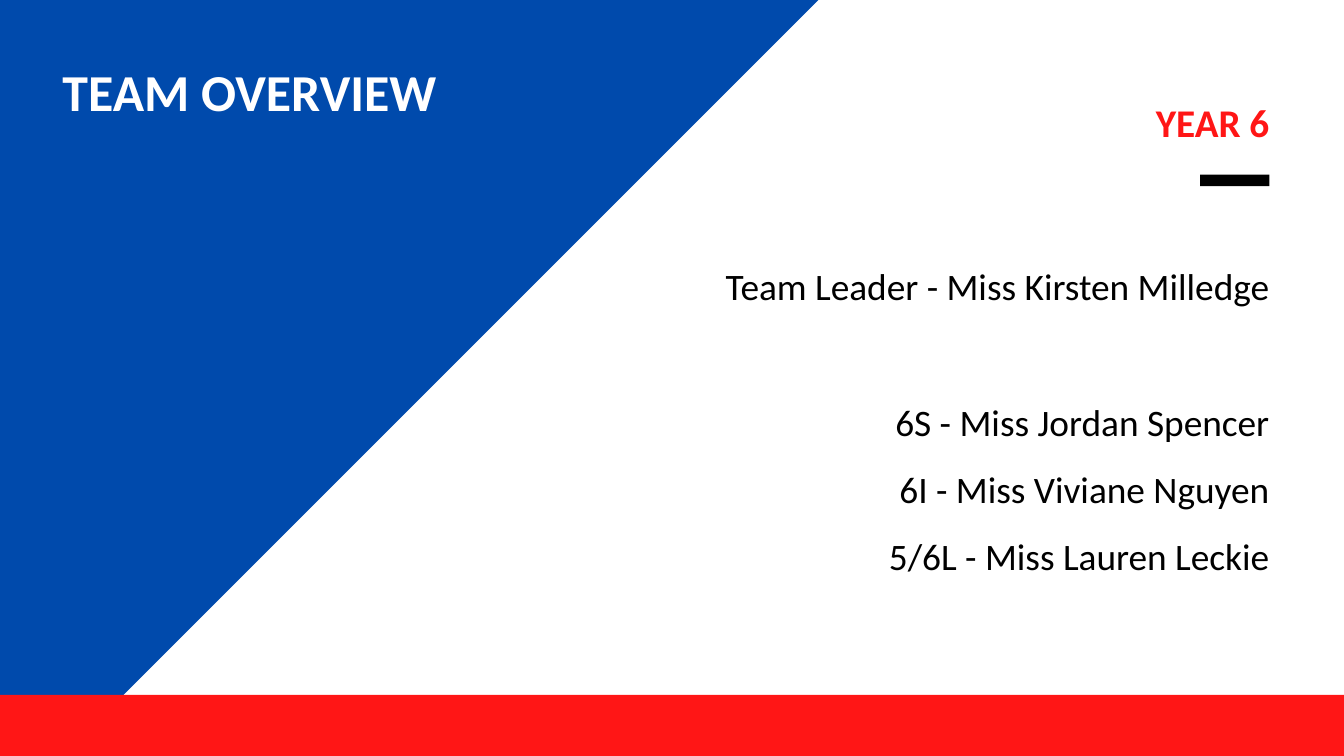
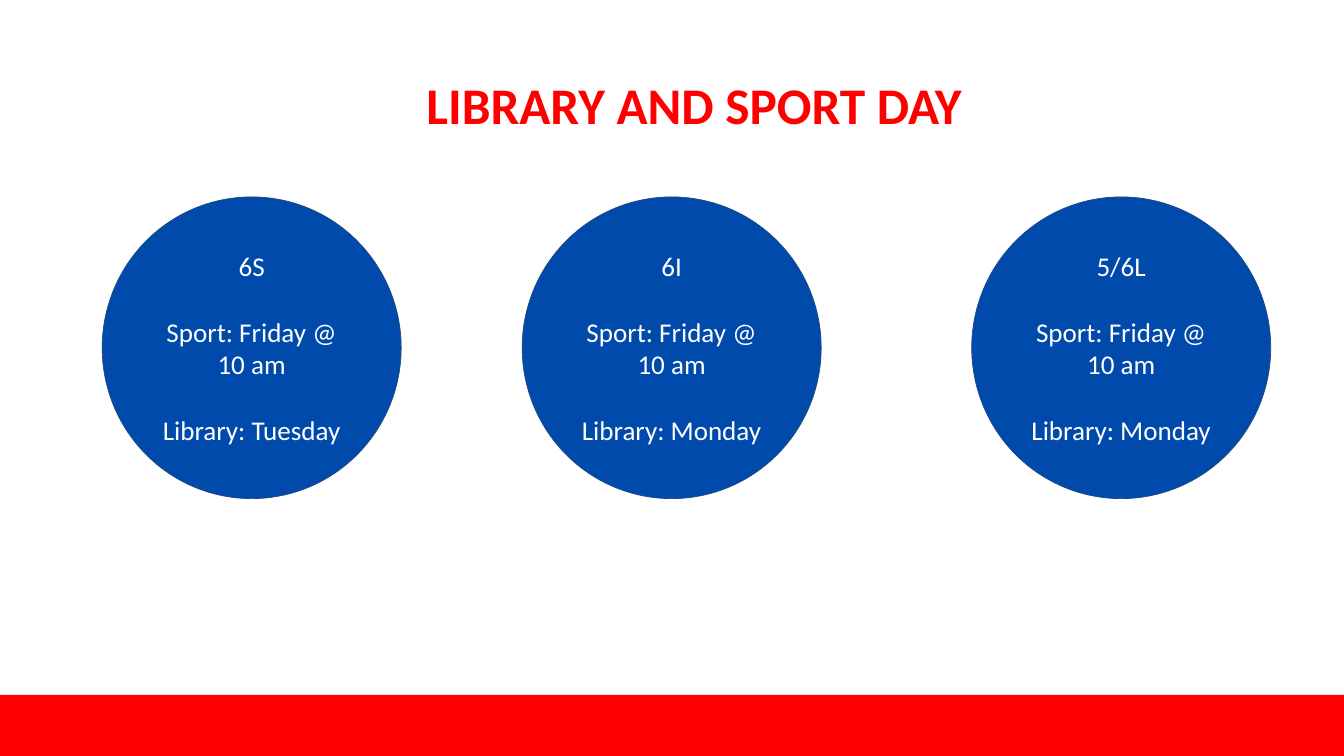
from dataclasses import dataclass

from pptx import Presentation
from pptx.dml.color import RGBColor
from pptx.enum.shapes import MSO_SHAPE
from pptx.enum.text import MSO_ANCHOR, PP_ALIGN
from pptx.shapes.autoshape import Shape
from pptx.slide import Slide
from pptx.text.text import TextFrame
from pptx.util import Inches, Pt

COLORS = {
    "blue": "004AAC",
    "outline": "1F497D",
    "bright_red": "FF1616",
    "red": "FF0000",
    "black": "000000",
    "white": "FFFFFF",
}
FONT = "Calibri"
PAGE_WIDTH, PAGE_HEIGHT = 20, 11.25
BAND_TOP = 10.34
CIRCLE_TOP, CIRCLE_WIDTH, CIRCLE_HEIGHT = 2.93, 4.45, 4.49


@dataclass(frozen=True)
class Area:
    left: float
    top: float
    width: float
    height: float

    def lengths(self) -> tuple:
        return tuple(Inches(v) for v in (self.left, self.top, self.width, self.height))


@dataclass(frozen=True)
class ClassDay:
    name: str
    left: float
    sport: str
    library: str


CLASS_DAYS = [
    ClassDay("6S", 1.52, "Friday @ 10 am", "Tuesday"),
    ClassDay("6I", 7.77, "Friday @ 10 am", "Monday"),
    ClassDay("5/6L", 14.46, "Friday @ 10 am", "Monday"),
]
TEAM = [
    "Team Leader - Miss Kirsten Milledge",
    "6S - Miss Jordan Spencer",
    "6I - Miss Viviane Nguyen",
    "5/6L - Miss Lauren Leckie",
]


def rgb(name: str) -> RGBColor:
    return RGBColor.from_string(COLORS[name])


def write(frame: TextFrame, lines: list[str], *, size: float, color: str,
          bold: bool = False, align: PP_ALIGN = PP_ALIGN.LEFT,
          spacing: float = 1.0, gaps: dict[int, float] | None = None) -> None:
    """Fill a frame; gaps maps a line number to the points left above it."""
    frame.word_wrap = True
    for number, line in enumerate(lines):
        para = frame.add_paragraph() if number else frame.paragraphs[0]
        para.alignment = align
        para.line_spacing = spacing
        para.space_before = Pt((gaps or {}).get(number, 0))
        span = para.add_run()
        span.text = line
        span.font.name = FONT
        span.font.size = Pt(size)
        span.font.bold = bold
        span.font.color.rgb = rgb(color)


def add_text(page: Slide, area: Area, lines: list[str], *,
             inset_top: float = 0.01, **style) -> None:
    frame = page.shapes.add_textbox(*area.lengths()).text_frame
    frame.margin_left = frame.margin_right = frame.margin_bottom = 0
    frame.margin_top = Inches(inset_top)
    write(frame, lines, **style)


def paint(shape: Shape, color: str) -> None:
    shape.shadow.inherit = False
    shape.fill.solid()
    shape.fill.fore_color.rgb = rgb(color)
    shape.line.fill.background()


def add_block(page: Slide, area: Area, color: str,
              kind: MSO_SHAPE = MSO_SHAPE.RECTANGLE) -> Shape:
    block = page.shapes.add_shape(kind, *area.lengths())
    paint(block, color)
    return block


def add_band(page: Slide, color: str) -> None:
    add_block(page, Area(0, BAND_TOP, PAGE_WIDTH, PAGE_HEIGHT - BAND_TOP), color)


def add_title(page: Slide, area: Area, text: str, **style) -> None:
    add_text(page, area, [text], bold=True, **style)


def add_class_circle(page: Slide, day: ClassDay) -> None:
    area = Area(day.left, CIRCLE_TOP, CIRCLE_WIDTH, CIRCLE_HEIGHT)
    circle = add_block(page, area, "blue", MSO_SHAPE.OVAL)
    circle.line.color.rgb = rgb("outline")
    circle.line.width = Pt(0.75)
    frame = circle.text_frame
    frame.margin_left = frame.margin_right = Inches(0.1)
    frame.margin_top = frame.margin_bottom = Inches(0.1)
    frame.vertical_anchor = MSO_ANCHOR.MIDDLE
    lines = [day.name, f"Sport: {day.sport}", f"Library: {day.library}"]
    write(frame, lines, size=29, color="white", align=PP_ALIGN.CENTER,
          gaps={1: 35.4, 2: 35.4})


def build_team_page(page: Slide) -> None:
    # Staff list, with a gap below the team leader
    add_text(page, Area(9.91, 3.58, 8.98, 4.73), TEAM, size=40, color="black",
             align=PP_ALIGN.RIGHT, spacing=1.5, gaps={1: 73})

    # Year heading and its dash
    add_block(page, Area(17.86, 2.6, 1.03, 0.17), "black")
    add_text(page, Area(12.72, 1.32, 6.17, 0.82), ["YEAR 6"], inset_top=0.11,
             size=42, color="bright_red", bold=True, align=PP_ALIGN.RIGHT,
             spacing=1.04)

    # Slanted blue panel behind the title
    corners = [(0.93, PAGE_HEIGHT), (0, PAGE_HEIGHT), (0, 0)]
    outline = page.shapes.build_freeform(Inches(12.18), 0)
    outline.add_line_segments([(Inches(x), Inches(y)) for x, y in corners])
    paint(outline.convert_to_shape(), "blue")
    add_title(page, Area(0.93, 0.69, 6.74, 2.07), "TEAM OVERVIEW",
              inset_top=0.12, size=55.5, color="white", spacing=1.09)

    add_band(page, "bright_red")


def build_days_page(page: Slide) -> None:
    add_title(page, Area(1.25, 1.08, 18.16, 0.94), "LIBRARY AND SPORT DAY",
              size=55, color="red", align=PP_ALIGN.CENTER)
    add_band(page, "red")

    # One circle for each class
    for day in CLASS_DAYS:
        add_class_circle(page, day)


def main() -> None:
    deck = Presentation()
    deck.slide_width = Inches(PAGE_WIDTH)
    deck.slide_height = Inches(PAGE_HEIGHT)
    blank = deck.slide_layouts[6]
    for build in (build_team_page, build_days_page):
        build(deck.slides.add_slide(blank))
    deck.save("out.pptx")


if __name__ == "__main__":
    main()
